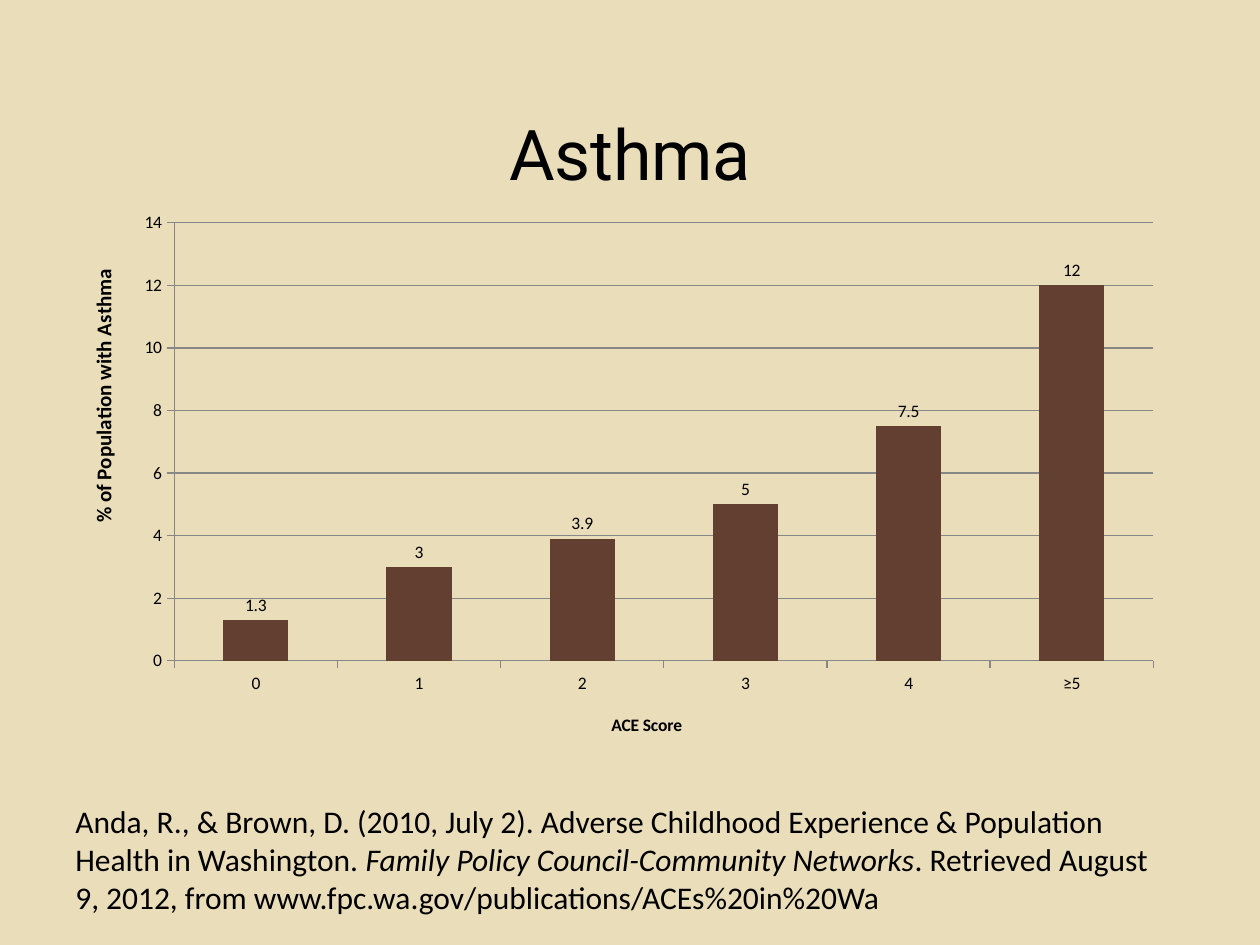
"""Build the asthma slide: a column chart by ACE score and its citation."""
from dataclasses import dataclass
from typing import Any, NamedTuple

from lxml.etree import SubElement
from pptx import Presentation
from pptx.chart.data import CategoryChartData
from pptx.dml.color import RGBColor
from pptx.enum.chart import XL_CHART_TYPE, XL_LABEL_POSITION, XL_TICK_MARK
from pptx.enum.text import MSO_AUTO_SIZE
from pptx.oxml import parse_xml
from pptx.oxml.ns import nsdecls, qn
from pptx.util import Cm, Pt


@dataclass(frozen=True)
class Theme:
    back: RGBColor = RGBColor(0xEA, 0xDD, 0xBA)
    ink: RGBColor = RGBColor(0, 0, 0)
    bar: RGBColor = RGBColor(0x63, 0x3F, 0x32)
    grid: RGBColor = RGBColor(0x87, 0x87, 0x87)
    body: str = "Calibri"
    head: str = "Roboto"
    tick: Pt = Pt(10)
    label: Pt = Pt(12)
    note: Pt = Pt(18)
    title: Pt = Pt(40)


class Head(NamedTuple):
    owner: Any
    text: str
    face: str
    size: Pt
    bold: bool
    spot: dict[str, float]


class Run(NamedTuple):
    text: str
    italic: bool = False


THEME = Theme()
LEFT, WIDTH = Cm(1.27), Cm(22.43)
SCORES = {"0": 1.3, "1": 3, "2": 3.9, "3": 5, "4": 7.5, "≥5": 12}
NOTE = [
    Run("Anda, R., & Brown, D. (2010, July 2). Adverse Childhood Experience "
        "& Population Health in Washington. "),
    Run("Family Policy Council-Community Networks", True),
    Run(". Retrieved August 9, 2012, from www.fpc.wa.gov/publications/ACEs%20in%20Wa"),
]


def apply(item: Any, **values: Any) -> None:
    """Set each named attribute on the item."""
    for name, value in values.items():
        setattr(item, name, value)


def style(font: Any, **values: Any) -> None:
    """Format a font in the ink colour."""
    apply(font, **values)
    font.color.rgb = THEME.ink


def place(node: Any, index: int, spot: dict[str, float], inner: bool = False) -> None:
    """Pin a chart part at fractions of the chart area."""
    for old in node.findall(qn("c:layout")):
        node.remove(old)
    layout = parse_xml(f"<c:layout {nsdecls('c')}/>")
    manual = SubElement(layout, qn("c:manualLayout"))
    modes = {"layoutTarget": "inner"} if inner else {}
    modes |= {"xMode": "edge", "yMode": "edge"}
    for name, value in (modes | spot).items():
        SubElement(manual, qn(f"c:{name}")).set("val", str(value))
    node.insert(index, layout)


def draw_head(head: Head) -> None:
    """Write and place a chart or axis title."""
    head.owner.has_title = True
    title = getattr(head.owner, "chart_title", None) or head.owner.axis_title
    para = title.text_frame.paragraphs[0]
    run = para.add_run()
    run.text = head.text
    for font in (para.font, run.font):
        style(font, name=head.face, size=head.size, bold=head.bold)
    place(title.element, 1, head.spot)


def draw_line(line: Any) -> None:
    """Draw a thin grey line."""
    line.color.rgb = THEME.grid
    line.width = Pt(0.75)


def draw_chart(slide: Any) -> None:
    """Add the column chart."""
    data = CategoryChartData()
    data.categories = list(SCORES)
    data.add_series("Series 1", list(SCORES.values()))
    chart = slide.shapes.add_chart(
        XL_CHART_TYPE.COLUMN_CLUSTERED, LEFT, Cm(1.07), WIDTH, Cm(14.25), data).chart
    chart.has_legend = False
    style(chart.font, name=THEME.body, size=THEME.tick)
    plot = chart.plots[0]
    apply(plot, gap_width=150, vary_by_categories=False, has_data_labels=True)
    apply(plot.data_labels, show_value=True, position=XL_LABEL_POSITION.OUTSIDE_END)
    style(plot.data_labels.font, name=THEME.body, size=THEME.tick)
    fill = plot.series[0].format.fill
    fill.solid()
    fill.fore_color.rgb = THEME.bar
    base, side = chart.category_axis, chart.value_axis
    for axis in (base, side):
        apply(axis, major_tick_mark=XL_TICK_MARK.OUTSIDE, minor_tick_mark=XL_TICK_MARK.NONE)
        draw_line(axis.format.line)
    apply(side, minimum_scale=0, maximum_scale=14, major_unit=2, has_major_gridlines=True)
    draw_line(side.major_gridlines.format.line)
    for head in (
        Head(chart, "Asthma", THEME.head, THEME.title, False, {"x": 0.39, "y": 0.06}),
        Head(base, "ACE Score", THEME.body, THEME.tick, True, {"x": 0.49, "y": 0.93}),
        Head(side, "% of Population with Asthma", THEME.body, THEME.label, True,
             {"x": 0.02, "y": 0.3}),
    ):
        draw_head(head)
    area = chart.element.chart.plotArea
    place(area, 0, {"x": 0.1, "y": 0.24, "w": 0.88, "h": 0.62}, inner=True)


def draw_note(slide: Any, runs: list[Run]) -> None:
    """Add the citation below the chart."""
    frame = slide.shapes.add_textbox(LEFT, Cm(16.05), WIDTH, Cm(2.57)).text_frame
    apply(frame, word_wrap=True, auto_size=MSO_AUTO_SIZE.SHAPE_TO_FIT_TEXT)
    for part in runs:
        run = frame.paragraphs[0].add_run()
        run.text = part.text
        style(run.font, name=THEME.body, size=THEME.note, italic=part.italic)


def main() -> None:
    """Build and save the slide."""
    deck = Presentation()
    apply(deck, slide_width=Cm(25.4), slide_height=Cm(19.05))
    slide = deck.slides.add_slide(deck.slide_layouts[6])
    fill = slide.background.fill
    fill.solid()
    fill.fore_color.rgb = THEME.back
    draw_chart(slide)
    draw_note(slide, NOTE)
    deck.save("out.pptx")


if __name__ == "__main__":
    main()
